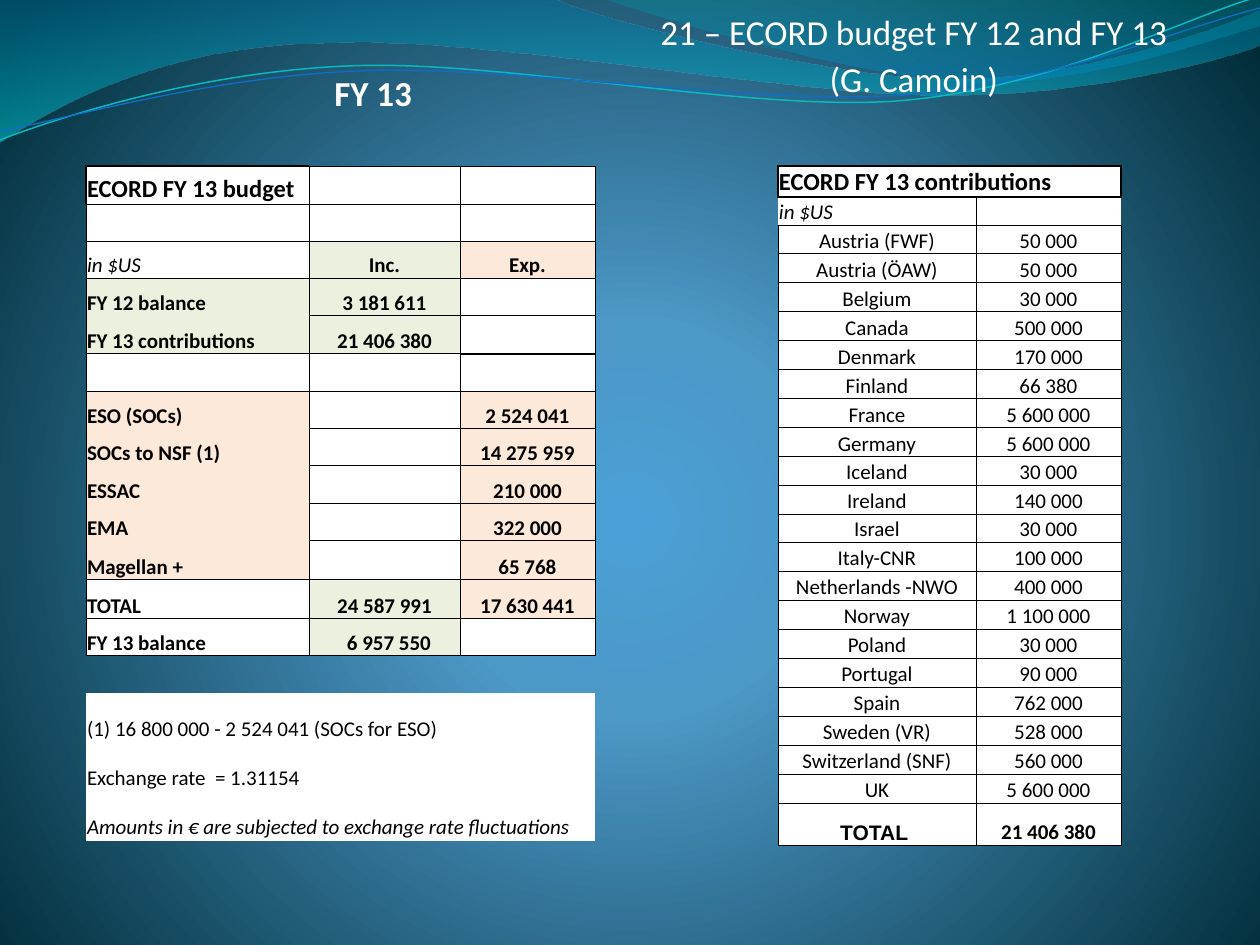
from math import cos, radians, sin

from lxml.etree import SubElement
from pptx import Presentation
from pptx.dml.color import RGBColor
from pptx.enum.text import MSO_ANCHOR, MSO_AUTO_SIZE, PP_ALIGN
from pptx.oxml import parse_xml
from pptx.oxml.ns import nsdecls, qn
from pptx.util import Emu, Pt

PX = 914400 / 126
WHITE = RGBColor(0xFF, 0xFF, 0xFF)
BLACK = RGBColor(0x00, 0x00, 0x00)
GREEN = RGBColor(0xEB, 0xF1, 0xDE)
ORANGE = RGBColor(0xFD, 0xE9, 0xD9)
TEAL = RGBColor(0x0A, 0xB8, 0xBF)
BLUE = RGBColor(0x0F, 0x6F, 0xC6)
SKY = RGBColor(0x4A, 0xA0, 0xD6)
STEEL = RGBColor(0x4C, 0x98, 0xC7)
NIGHT = RGBColor(0x00, 0x2C, 0x38)
OCEAN = RGBColor(0x00, 0x74, 0xA1)
AQUA = RGBColor(0x00, 0xC6, 0xCF)
LAGOON = RGBColor(0x00, 0xA1, 0xA9)
AZURE = RGBColor(0x00, 0x8B, 0xBF)
FILLS = {"w": WHITE, "g": GREEN, "o": ORANGE}
NO_STYLE = "{2D5ABB26-0587-4C30-8999-92F81FD0307C}"
DOWN = '<a:lin ang="5400000" scaled="0"/>'
GLOW = '<a:path path="circle"><a:fillToRect l="10000" t="110000" r="10000" b="100000"/></a:path>'

WIDE_WAVE = [(0, 0), (554, -1), (600, 21, 837, 79, 955, 79), (1075, 79, 1207, 33, 1260, 11),
             (1261, 45), (1239, 55, 1096, 96, 940, 95), (784, 95, 481, 35, 324, 43),
             (163, 45, 58, 105, -1, 142)]
SMALL_WAVE = [(604, -1), (641, 14, 859, 78, 969, 82), (1079, 87, 1211, 40, 1260, 26), (1260, 0)]
TEAL_LINE = [(0, 140), (60, 117, 199, 72, 349, 66), (498, 59, 747, 112, 898, 101),
             (1050, 89, 1182, 19, 1257, -3)]
BLUE_LINE = [(0, 131), (59, 121, 207, 77, 357, 71), (508, 64, 752, 106, 903, 95),
             (1053, 84, 1186, 26, 1260, 8)]

BUDGET = [
    ("www", "ECORD FY 13 budget", "", ""), ("www", "", "", ""),
    ("wgo", "in $US", "Inc.", "Exp."),
    ("ggw", "FY 12 balance", "3 181 611", ""),
    ("ggw", "FY 13 contributions", "21 406 380", ""), ("www", "", "", ""),
    ("owo", "ESO (SOCs)", "", "2 524 041"),
    ("owo", "SOCs to NSF (1)", "", "14 275 959"),
    ("owo", "ESSAC", "", "210 000"), ("owo", "EMA", "", "322 000"),
    ("owo", "Magellan +", "", "65 768"),
    ("wgo", "TOTAL", "24 587 991", "17 630 441"),
    ("wgw", "FY 13 balance", "6 957 550", ""), ("---", "", "", ""),
    ("www", "(1) 16 800 000 - 2 524 041 (SOCs for ESO)", "", ""),
    ("www", "Exchange rate  = 1.31154", "", ""),
    ("www", "Amounts in € are subjected to exchange rate fluctuations", "", "")]
BUDGET_HEIGHTS = [38, 37, 37, 38, 38, 38, 37, 37, 38, 37, 39, 39, 37, 37, 50, 49, 49]
BUDGET_EDGES = {
    (0, 0): "LTrb", (3, 0): "ltr", (4, 0): "lrb", (4, 2): "ltrB", (5, 2): "lTrb",
    (6, 0): "ltr", (7, 0): "lr", (8, 0): "lr", (9, 0): "lr", (10, 0): "lrB",
    (11, 0): "lTrB", (11, 2): "ltrB", (12, 0): "lTrb", (12, 2): "lTrb"}
CONTRIBUTIONS = [
    ("ECORD FY 13 contributions", ""), ("in $US", ""),
    ("Austria (FWF)", "50 000"), ("Austria (ÖAW)", "50 000"), ("Belgium", "30 000"),
    ("Canada", "500 000"), ("Denmark", "170 000"), ("Finland", "66 380"),
    ("France", "5 600 000"), ("Germany", "5 600 000"), ("Iceland", "30 000"),
    ("Ireland", "140 000"), ("Israel", "30 000"), ("Italy-CNR", "100 000"),
    ("Netherlands -NWO", "400 000"), ("Norway", "1 100 000"), ("Poland", "30 000"),
    ("Portugal", "90 000"), ("Spain", "762 000"), ("Sweden (VR)", "528 000"),
    ("Switzerland (SNF)", "560 000"), ("UK", "5 600 000"), ("TOTAL ", "21 406 380")]
CONTRIBUTION_EDGES = {(0, 0): "LTRB", (0, 1): "LTRB", (1, 0): "Trb", (1, 1): "lTb"}


def px(n):
    """Turn pixels into EMU."""
    return Emu(round(n * PX))


def even(total, n):
    """Split a length into n nearly equal whole parts."""
    return [round((i + 1) * total / n) - round(i * total / n) for i in range(n)]


def set_gradient(solid, stops, shade):
    """Replace a solid fill element by a gradient of (position, colour, opacity)."""
    gs = "".join(f'<a:gs pos="{pos * 1000}"><a:srgbClr val="{color}">'
                 f'<a:alpha val="{alpha * 1000}"/></a:srgbClr></a:gs>'
                 for pos, color, alpha in stops)
    grad = parse_xml(f'<a:gradFill {nsdecls("a")} rotWithShape="1">'
                     f'<a:gsLst>{gs}</a:gsLst>{shade}</a:gradFill>')
    solid.getparent().replace(solid, grad)


def add_outline(shapes, route, close, turn=lambda x, y: (x, y)):
    """Add a freeform of straight (2 numbers) and cubic (6 numbers) segments."""
    pts = [tuple(map(px, turn(*seg[i:i + 2]))) for seg in route for i in range(0, len(seg), 2)]
    builder = shapes.build_freeform(*pts[0], scale=1.0)
    builder.add_line_segments(pts[1:], close=close)
    sp = builder.convert_to_shape()
    sp.shadow.inherit = False
    lines = iter(sp.element.xpath(".//a:lnTo"))
    for seg in route[1:]:
        first = next(lines)
        if len(seg) == 6:
            first.tag = qn("a:cubicBezTo")
            for line in (next(lines), next(lines)):
                first.append(line[0])
                line.getparent().remove(line)
    return sp


def add_wave(shapes, route, stops):
    """Add a translucent wave."""
    sp = add_outline(shapes, route, True)
    sp.line.fill.background()
    sp.fill.solid()
    set_gradient(sp.element.spPr.find(qn("a:solidFill")), stops, DOWN)


def add_curve(shapes, route, cy, color, width, tilt=2.7):
    """Add a thin curve tilted upwards to the right."""
    a, cx = radians(tilt), 629

    def level(x, y):
        """Turn a point back to the untilted curve."""
        return (cx + (x - cx) * cos(a) - (y - cy) * sin(a),
                cy + (x - cx) * sin(a) + (y - cy) * cos(a))

    sp = add_outline(shapes, route, False, level)
    sp.rotation = 360 - tilt
    sp.fill.background()
    sp.line.color.rgb = color
    sp.line.width = Pt(width)


def add_text(slide, box, lines, align, bold=False, wrap=True, spacing=None):
    """Add a white heading."""
    tf = slide.shapes.add_textbox(*map(px, box)).text_frame
    tf.word_wrap = wrap
    tf.auto_size = MSO_AUTO_SIZE.SHAPE_TO_FIT_TEXT
    tf.text = "\n".join(lines)
    for p in tf.paragraphs:
        p.alignment, p.line_spacing = align, spacing
        style_run(p.runs[0], 20, WHITE, bold)


def style_run(r, size, color, bold=False, italic=False, font="Calibri"):
    """Set the font of a run."""
    f = r.font
    f.name, f.size, f.bold, f.italic = font, Pt(size), bold, italic
    f.color.rgb = color


def set_edges(cell, edges):
    """Draw the named sides, capitals at 1 pt and small letters at 0.5 pt."""
    tcPr = cell._tc.get_or_add_tcPr()
    for side in "LRTB":
        width = Pt(1) if side in edges else Pt(0.5) if side.lower() in edges else 0
        ln = SubElement(tcPr, qn(f"a:ln{side}"), w=str(width))
        if width:
            SubElement(SubElement(ln, qn("a:solidFill")), qn("a:srgbClr"), val=str(BLACK))
        else:
            SubElement(ln, qn("a:noFill"))


def set_cell(cell, text, edges, fill, align, size=12, **style):
    """Fill one table cell."""
    set_edges(cell, edges)
    cell.margin_left = cell.margin_right = cell.margin_top = px(1)
    cell.margin_bottom = 0
    cell.vertical_anchor = MSO_ANCHOR.BOTTOM
    if fill:
        cell.fill.solid()
        cell.fill.fore_color.rgb = fill
    p = cell.text_frame.paragraphs[0]
    p.text, p.alignment = text, align
    if text:
        style_run(p.runs[0], size, BLACK, **style)
    else:
        SubElement(p._p, qn("a:endParaRPr"), sz="1200")


def add_grid(slide, left, top, widths, heights):
    """Add a table without a style."""
    table = slide.shapes.add_table(len(heights), len(widths), px(left), px(top),
                                   px(sum(widths)), px(sum(heights))).table
    table.first_row = table.horz_banding = False
    table._tbl.tblPr.find(qn("a:tableStyleId")).text = NO_STYLE
    for col, w in zip(table.columns, widths):
        col.width = px(w)
    for row, h in zip(table.rows, heights):
        row.height = px(h)
    return table


def add_contributions(slide):
    """Add the table of contributions by country."""
    table = add_grid(slide, 778, 166, [198, 145], [31, 28] + even(579, 20) + [42])
    last = len(CONTRIBUTIONS) - 1
    for i, row in enumerate(CONTRIBUTIONS):
        for j, text in enumerate(row):
            set_cell(table.cell(i, j), text, CONTRIBUTION_EDGES.get((i, j), "ltrb"), WHITE,
                     PP_ALIGN.LEFT if i < 2 else PP_ALIGN.CENTER, 14 if i == 0 else 12,
                     bold=i in (0, last), italic=i == 1,
                     font="Arial" if (i, j) == (last, 0) else "Calibri")
    table.cell(0, 0).merge(table.cell(0, 1))


def add_budget(slide):
    """Add the table of income and expenses with its notes."""
    table = add_grid(slide, 86, 166, [223, 151, 135], BUDGET_HEIGHTS)
    for i, (fills, *row) in enumerate(BUDGET):
        edges = "ltrb" if i < 13 else "t" if i == 13 else ""
        for j, text in enumerate(row):
            set_cell(table.cell(i, j), text, BUDGET_EDGES.get((i, j), edges),
                     FILLS.get(fills[j]), PP_ALIGN.CENTER if j else PP_ALIGN.LEFT,
                     14 if i == 0 else 12, bold=i < 13 and text != "in $US",
                     italic=i == 16 or text == "in $US")
    table.cell(12, 1).margin_left = px(10)
    table.cell(14, 0).merge(table.cell(14, 1))
    table.cell(16, 0).merge(table.cell(16, 2))


def main():
    """Build the slide."""
    prs = Presentation()
    prs.slide_width, prs.slide_height = px(1260), px(945)
    s = prs.slides.add_slide(prs.slide_layouts[6])
    s.background.fill.solid()
    set_gradient(s.element.xpath(".//p:bgPr/a:solidFill")[0],
                 [(0, SKY, 100), (25, STEEL, 100), (100, NIGHT, 100)], GLOW)
    add_wave(s.shapes, WIDE_WAVE, [(0, OCEAN, 45), (100, AQUA, 55)])
    add_wave(s.shapes, SMALL_WAVE, [(0, LAGOON, 30), (80, AZURE, 45)])
    curves = s.shapes.add_group_shape().shapes
    add_curve(curves, TEAL_LINE, 72, TEAL, 0.85)
    add_curve(curves, BLUE_LINE, 74, BLUE, 0.75)
    add_text(s, (568, 0, 692, 106), ["21 – ECORD budget FY 12 and FY 13", "(G. Camoin)"],
             PP_ALIGN.CENTER, spacing=Pt(26.6))
    add_contributions(s)
    add_budget(s)
    add_text(s, (322, 65, 103, 55), ["FY 13"], PP_ALIGN.LEFT, bold=True, wrap=False)
    prs.save("out.pptx")


if __name__ == "__main__":
    main()
